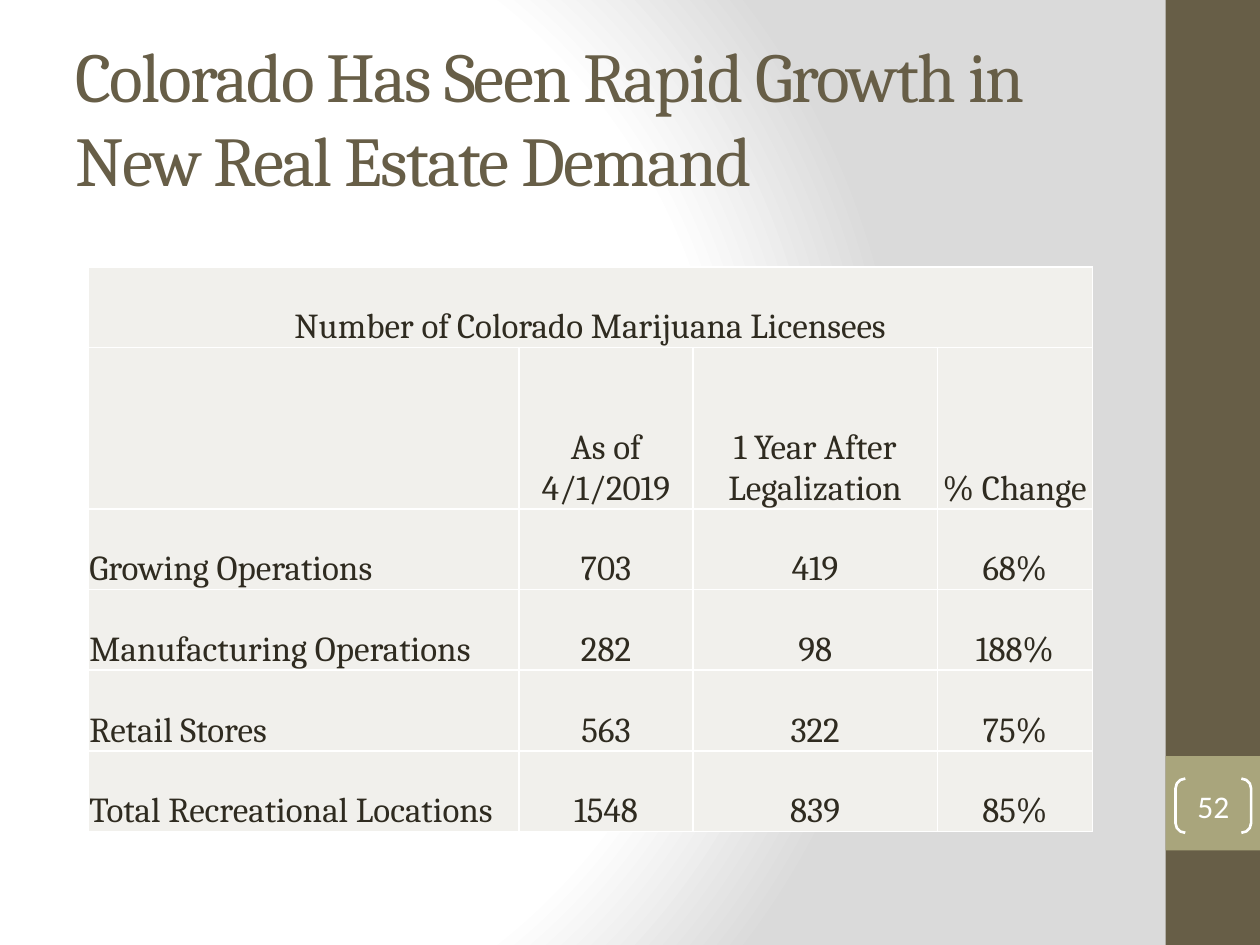
from typing import NamedTuple

from pptx import Presentation
from pptx import oxml
from pptx.dml.color import RGBColor
from pptx.enum import shapes, text
from pptx.oxml import ns
from pptx.util import Inches, Pt

BROWN, OLIVE, WHITE = "675E47", "A9A57C", "FFFFFF"
INK, CELL_FILL = "2F2B20", "F1F0EC"
NS = ns.nsdecls("a", "p")


class Band(NamedTuple):
    top: float
    height: float
    color: str


SIDE_BANDS = [Band(0, 7.5, BROWN), Band(6, 0.75, OLIVE)]
COLUMN_WIDTHS = [3.42, 1.38, 1.94, 1.23]
ROW_HEIGHTS = [0.64, 1.28] + [0.64] * 4
ROWS = [
    ["Number of Colorado Marijuana Licensees", "", "", ""],
    ["", "As of 4/1/2019", "1 Year After Legalization", "% Change"],
    ["Growing Operations", "703", "419", "68%"],
    ["Manufacturing Operations", "282", "98", "188%"],
    ["Retail Stores", "563", "322", "75%"],
    ["Total Recreational Locations", "1548", "839", "85%"],
]


def rgb(color: str) -> RGBColor:
    return RGBColor.from_string(color)


def write(tf, content: str, *, size: float, color: str, font: str = "Cambria",
          align=text.PP_ALIGN.LEFT, spacing: float = 0) -> None:
    p = tf.paragraphs[0]
    p.alignment = align
    r = p.add_run()
    r.text = content
    r.font.size = Pt(size)
    r.font.name = font
    r.font.color.rgb = rgb(color)
    if spacing:
        r.font._element.set("spc", str(int(spacing * 100)))


def set_background(s) -> None:
    """Fill the background with a circular white to grey gradient."""
    stops = "".join(
        f'<a:gs pos="{pos * 1000}"><a:srgbClr val="{color}"/></a:gs>'
        for pos, color in [(0, WHITE), (75, WHITE), (100, "DADADA")])
    bg = oxml.parse_xml(
        f'<p:bg {NS}><p:bgPr><a:gradFill rotWithShape="1"><a:gsLst>{stops}</a:gsLst>'
        '<a:path path="circle"><a:fillToRect l="20000" t="50000" r="100000" b="50000"/>'
        '</a:path></a:gradFill><a:effectLst/></p:bgPr></p:bg>')
    s.element.cSld.insert(0, bg)


def add_band(s, band: Band) -> None:
    sp = s.shapes.add_shape(shapes.MSO_SHAPE.RECTANGLE, Inches(9.25), Inches(band.top),
                            Inches(0.75), Inches(band.height))
    sp.shadow.inherit = False
    sp.fill.solid()
    sp.fill.fore_color.rgb = rgb(band.color)
    sp.line.fill.background()


def add_title(s) -> None:
    sp = s.shapes.add_textbox(Inches(0.5), Inches(0.3), Inches(8.33), Inches(1.25))
    tf = sp.text_frame
    tf.word_wrap = True
    tf.vertical_anchor = text.MSO_ANCHOR.MIDDLE
    write(tf, "Colorado Has Seen Rapid Growth in New Real Estate Demand",
          size=40, color=BROWN, spacing=-1)


def set_borders(cell) -> None:
    """Put a thin white line on each side of the cell."""
    tc_pr = cell._tc.get_or_add_tcPr()
    for i, side in enumerate(["lnL", "lnR", "lnT", "lnB"]):
        tc_pr.insert(i, oxml.parse_xml(
            f'<a:{side} {NS} w="{Pt(1)}"><a:solidFill><a:srgbClr val="{WHITE}"/>'
            f'</a:solidFill></a:{side}>'))


def format_cell(cell, content: str, align) -> None:
    cell.fill.solid()
    cell.fill.fore_color.rgb = rgb(CELL_FILL)
    cell.vertical_anchor = text.MSO_ANCHOR.BOTTOM
    cell.margin_left = cell.margin_right = cell.margin_top = Inches(0.01)
    cell.margin_bottom = 0
    set_borders(cell)
    if content:
        write(cell.text_frame, content, size=20, color=INK, align=align)


def add_licensee_table(s) -> None:
    table = s.shapes.add_table(
        len(ROWS), len(COLUMN_WIDTHS), Inches(0.7), Inches(2.12),
        Inches(sum(COLUMN_WIDTHS)), Inches(sum(ROW_HEIGHTS))).table
    table.first_row = table.horz_banding = False
    for column, width in zip(table.columns, COLUMN_WIDTHS):
        column.width = Inches(width)
    for row, height in zip(table.rows, ROW_HEIGHTS):
        row.height = Inches(height)
    for i, row in enumerate(ROWS):
        for j, content in enumerate(row):
            is_label = i > 0 and j == 0
            align = text.PP_ALIGN.LEFT if is_label else text.PP_ALIGN.CENTER
            format_cell(table.cell(i, j), content, align)
    table.cell(0, 0).merge(table.cell(0, 3))


def add_page_number(s) -> None:
    sp = s.shapes.add_shape(shapes.MSO_SHAPE.DOUBLE_BRACKET, Inches(9.33), Inches(6.18),
                            Inches(0.6), Inches(0.43))
    sp.adjustments[0] = 0.18
    sp.shadow.inherit = False
    sp.fill.background()
    sp.line.color.rgb = rgb(WHITE)
    sp.line.width = Pt(1.5)
    tf = sp.text_frame
    tf.margin_left = tf.margin_right = tf.margin_top = tf.margin_bottom = 0
    tf.vertical_anchor = text.MSO_ANCHOR.MIDDLE
    write(tf, "52", size=18, color=WHITE, font="Calibri", align=text.PP_ALIGN.CENTER)


def main() -> None:
    prs = Presentation()
    prs.slide_width, prs.slide_height = Inches(10), Inches(7.5)
    s = prs.slides.add_slide(prs.slide_layouts[6])
    set_background(s)
    for band in SIDE_BANDS:
        add_band(s, band)
    add_title(s)
    add_licensee_table(s)
    add_page_number(s)
    prs.save("out.pptx")


if __name__ == "__main__":
    main()
